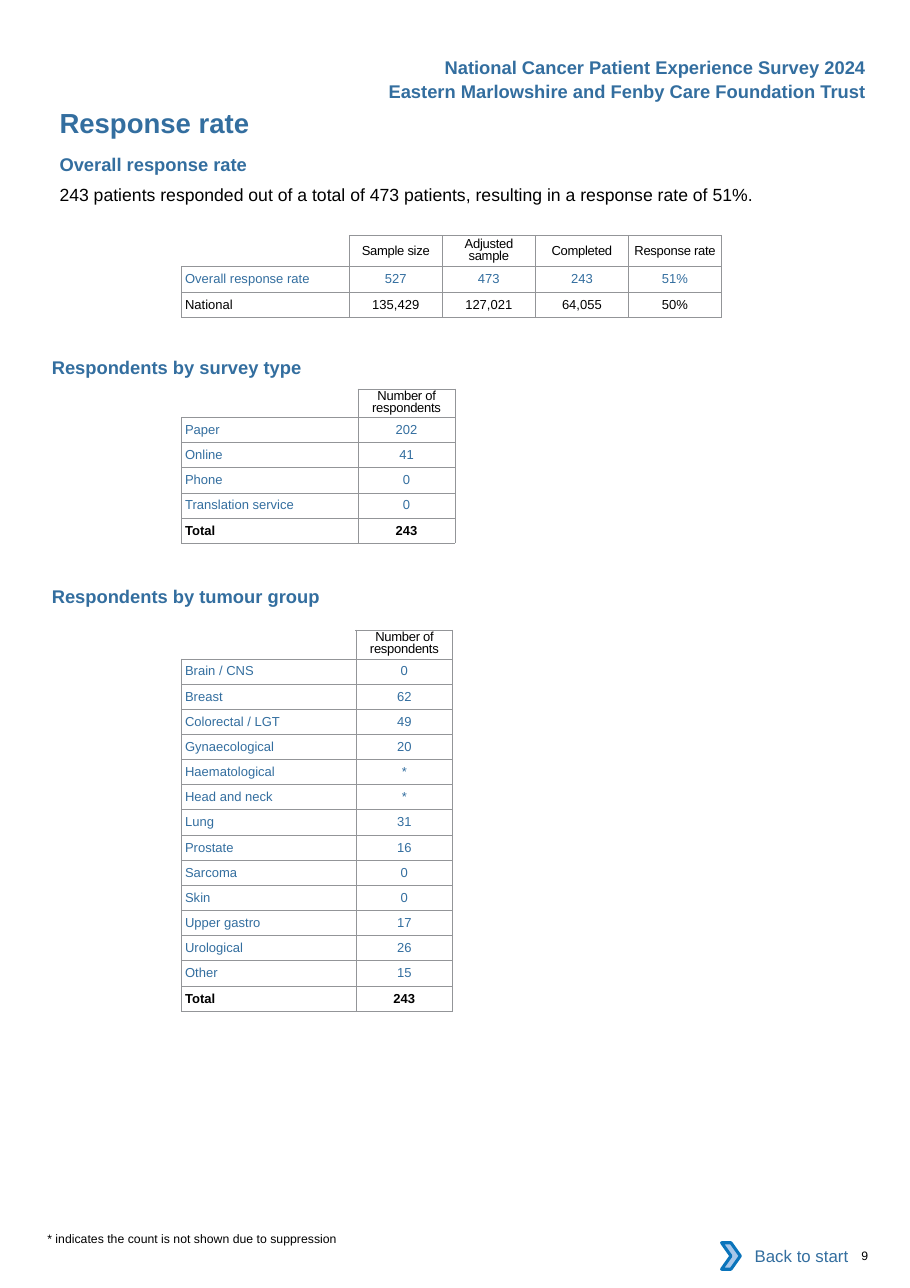
"""Build the response rate page of a patient experience survey report."""
from dataclasses import dataclass

from lxml import etree
from pptx import Presentation
from pptx.dml.color import RGBColor
from pptx.enum.shapes import MSO_SHAPE
from pptx.enum.text import MSO_ANCHOR, PP_ALIGN
from pptx.oxml.ns import qn
from pptx.util import Inches, Pt

LEFT, CENTER, RIGHT = PP_ALIGN.LEFT, PP_ALIGN.CENTER, PP_ALIGN.RIGHT
TOP, MIDDLE = MSO_ANCHOR.TOP, MSO_ANCHOR.MIDDLE
RECTANGLE, CHEVRON = MSO_SHAPE.RECTANGLE, MSO_SHAPE.CHEVRON


@dataclass(frozen=True)
class Theme:
    font: str = "Arial"
    blue: str = "336E9F"
    black: str = "000000"
    white: str = "FFFFFF"
    grid: str = "939598"
    arrow_fill: str = "A8C7E9"
    arrow_line: str = "0A74BB"
    title: float = 18
    heading: float = 12
    body: float = 11.5
    link: float = 11
    table: float = 8.5
    note: float = 8


THEME = Theme()


def write(frame, text, size, color, bold=False, align=LEFT, insets=(0, 0, 0, 0), anchor=TOP):
    """Fill a text frame or table cell with one styled run and return its paragraph."""
    frame.margin_left, frame.margin_top, frame.margin_right, frame.margin_bottom = map(Inches, insets)
    frame.vertical_anchor = anchor
    holder = getattr(frame, "text_frame", frame)
    paragraph = holder.paragraphs[0]
    paragraph.alignment = align
    run = paragraph.add_run()
    run.text = text
    run.font.name, run.font.size, run.font.bold = THEME.font, Pt(size), bold
    run.font.color.rgb = RGBColor.from_string(color)
    return paragraph


def border(cell, hidden_sides=()):
    """Draw the thin grid lines of a cell, leaving out the hidden sides."""
    properties = cell._tc.get_or_add_tcPr()
    for position, side in enumerate(("lnL", "lnR", "lnT", "lnB")):
        line = etree.Element(qn(f"a:{side}"), w=str(Pt(0.5)))
        if side in hidden_sides:
            etree.SubElement(line, qn("a:noFill"))
        else:
            fill = etree.SubElement(line, qn("a:solidFill"))
            etree.SubElement(fill, qn("a:srgbClr"), val=THEME.grid)
        properties.insert(position, line)


prs = Presentation()
prs.slide_width, prs.slide_height = Inches(8.26), Inches(11.69)
slide = prs.slides.add_slide(prs.slide_layouts[5])

title = slide.shapes.title
title.left, title.top, title.width, title.height = map(Inches, (0.54, 0.96, 4.12, 0.3))
write(title.text_frame, "Response rate", THEME.title, THEME.blue, True)

PLAIN = (0, 0, 0, 0)
PADDED = (0.1, 0.05, 0.1, 0.05)
texts = [
    ("National Cancer Patient Experience Survey 2024",
     (3.92, 0.46, 4.04, 0.3), THEME.heading, THEME.blue, True, RIGHT, PADDED),
    ("Eastern Marlowshire and Fenby Care Foundation Trust",
     (3.29, 0.68, 4.67, 0.3), THEME.heading, THEME.blue, True, RIGHT, PADDED),
    ("Overall response rate",
     (0.54, 1.39, 4.12, 0.2), THEME.heading, THEME.blue, True, LEFT, PLAIN),
    ("243 patients responded out of a total of 473 patients, resulting in a response rate of 51%.",
     (0.54, 1.67, 7.19, 0.19), THEME.body, THEME.black, False, LEFT, PLAIN),
    ("Respondents by survey type",
     (0.47, 3.23, 2.29, 0.2), THEME.heading, THEME.blue, True, LEFT, PLAIN),
    ("Respondents by tumour group",
     (0.47, 5.31, 2.45, 0.2), THEME.heading, THEME.blue, True, LEFT, PLAIN),
    ("* indicates the count is not shown due to suppression",
     (0.43, 11.18, 2.64, 0.13), THEME.note, THEME.black, False, LEFT, PLAIN),
    ("9", (7.72, 11.33, 0.51, 0.13), THEME.note, THEME.black, False, LEFT, (0.1, 0, 0, 0)),
]
for text, place, size, color, bold, align, insets in texts:
    frame = slide.shapes.add_textbox(*map(Inches, place)).text_frame
    frame.word_wrap = align == LEFT
    write(frame, text, size, color, bold, align, insets)

TABLE_LEFT = 1.65
WRAPPED_HEADERS = ("Adjusted sample", "Number of respondents")
BLACK_ROWS = ("National", "Total")
tables = [
    (2.14, 4.9, 0.74, 1.52, 0.28, [
        ("", "Sample size", "Adjusted sample", "Completed", "Response rate"),
        ("Overall response rate", "527", "473", "243", "51%"),
        ("National", "135,429", "127,021", "64,055", "50%"),
    ]),
    (3.53, 2.48, 1.4, 1.6, 0.26, [
        ("", "Number of respondents"),
        ("Paper", "202"),
        ("Online", "41"),
        ("Phone", "0"),
        ("Translation service", "0"),
        ("Total", "243"),
    ]),
    (5.72, 2.46, 3.46, 1.58, 0.26, [
        ("", "Number of respondents"),
        ("Brain / CNS", "0"),
        ("Breast", "62"),
        ("Colorectal / LGT", "49"),
        ("Gynaecological", "20"),
        ("Haematological", "*"),
        ("Head and neck", "*"),
        ("Lung", "31"),
        ("Prostate", "16"),
        ("Sarcoma", "0"),
        ("Skin", "0"),
        ("Upper gastro", "17"),
        ("Urological", "26"),
        ("Other", "15"),
        ("Total", "243"),
    ]),
]
for top, width, height, label_width, header_height, rows in tables:
    column_count = len(rows[0])
    table = slide.shapes.add_table(
        len(rows), column_count, *map(Inches, (TABLE_LEFT, top, width, height))).table
    table.first_row = table.horz_banding = False
    for index, column in enumerate(table.columns):
        column.width = Inches((width - label_width) / (column_count - 1) if index else label_width)
    for index, row in enumerate(table.rows):
        row.height = Inches((height - header_height) / (len(rows) - 1) if index else header_height)
    for row_index, values in enumerate(rows):
        color = THEME.black if row_index == 0 or values[0] in BLACK_ROWS else THEME.blue
        for column_index, value in enumerate(values):
            cell = table.cell(row_index, column_index)
            cell.fill.background()
            if not value:
                border(cell, ("lnL", "lnT"))
                cell.margin_top = cell.margin_bottom = 0
                ending = etree.SubElement(cell.text_frame.paragraphs[0]._p, qn("a:endParaRPr"))
                ending.set("sz", str(int(THEME.table * 100)))
                continue
            border(cell)
            wrapped = value in WRAPPED_HEADERS
            side = 0.1 if wrapped else 0
            insets = (side, 0, side, 0) if column_index else (0.03, 0, 0, 0)
            paragraph = write(cell, value, THEME.table, color, values[0] == "Total",
                              CENTER if column_index else LEFT, insets, MIDDLE)
            if wrapped:
                paragraph.line_spacing = Pt(7.6)
            if row_index == 0:
                paragraph.runs[0].font._element.set("spc", "-20")

back_link = slide.shapes.add_group_shape()
link_label = back_link.shapes.add_shape(RECTANGLE, *map(Inches, (6.62, 11.19, 1.18, 0.42)))
link_label.fill.solid()
link_label.fill.fore_color.rgb = RGBColor.from_string(THEME.white)
link_label.line.fill.background()
link_label.shadow.inherit = False
write(link_label.text_frame, "Back to start", THEME.link, THEME.blue,
      align=RIGHT, insets=PADDED, anchor=MIDDLE)

link_arrow = back_link.shapes.add_shape(CHEVRON, *map(Inches, (6.55, 11.28, 0.17, 0.24)))
link_arrow.fill.solid()
link_arrow.fill.fore_color.rgb = RGBColor.from_string(THEME.arrow_fill)
link_arrow.line.color.rgb = RGBColor.from_string(THEME.arrow_line)
link_arrow.line.width = Pt(2)
link_arrow.shadow.inherit = False

prs.save("out.pptx")
